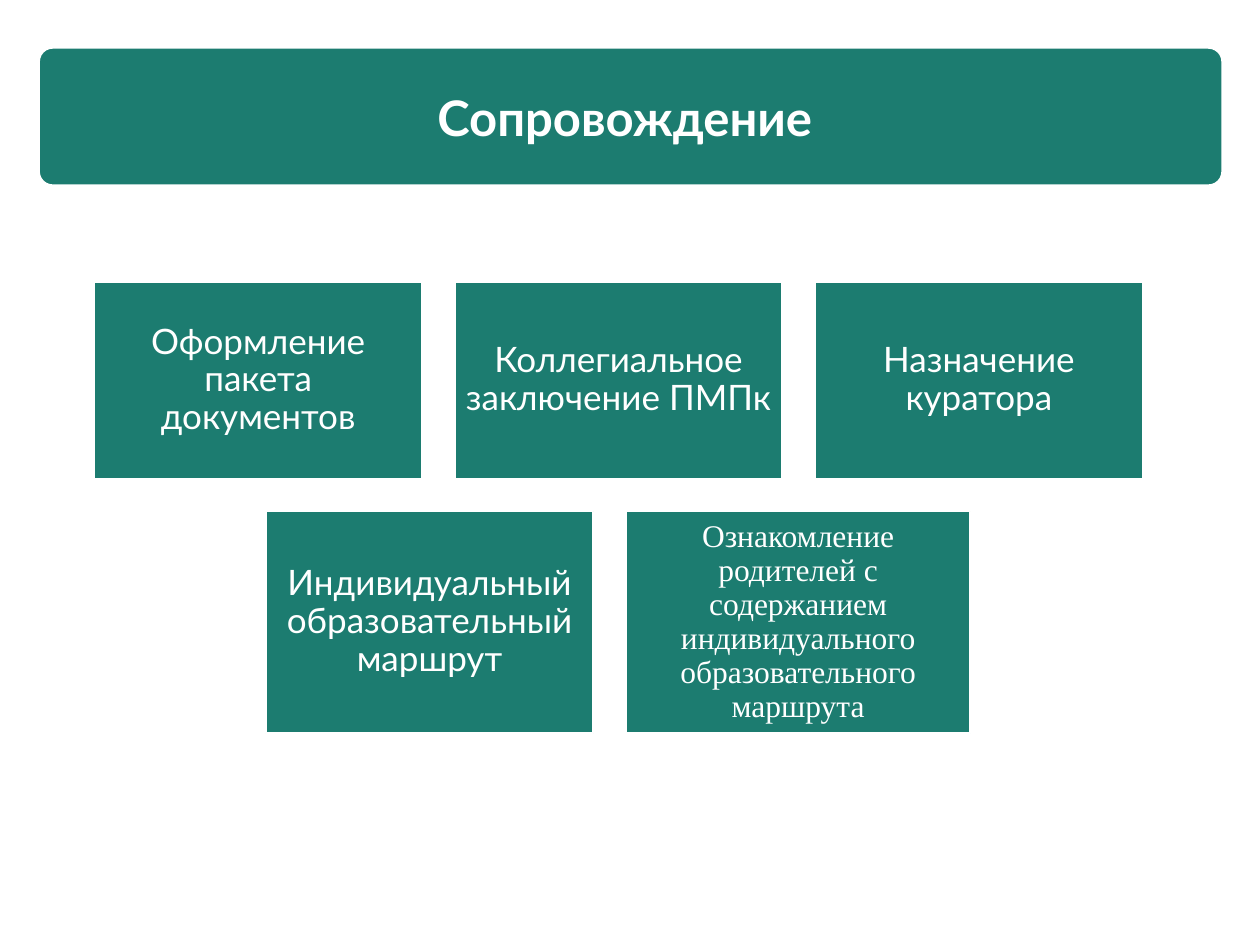
from dataclasses import dataclass

from pptx import Presentation
from pptx.dml.color import RGBColor
from pptx.enum.shapes import MSO_SHAPE
from pptx.enum.text import MSO_ANCHOR, MSO_AUTO_SIZE, PP_ALIGN
from pptx.shapes.autoshape import Shape
from pptx.slide import Slide
from pptx.util import Inches, Pt

TEAL = RGBColor(0x1C, 0x7C, 0x70)
WHITE = RGBColor(0xFF, 0xFF, 0xFF)

STEP_WIDTH = 2.6
STEP_PITCH = 2.86


@dataclass
class Step:
    text: str
    width: float = STEP_WIDTH
    font: str = "Lato"
    size: int = 20
    inset: float = 0.08


@dataclass
class StepRow:
    left: float
    top: float
    height: float
    steps: list[Step]


ROWS = [
    StepRow(0.75, 2.24, 1.56, [
        Step("Оформление пакета документов"),
        Step("Коллегиальное заключение ПМПк"),
        Step("Назначение куратора"),
    ]),
    StepRow(2.11, 4.06, 1.76, [
        Step("Индивидуальный образовательный маршрут"),
        Step(
            "Ознакомление родителей с содержанием индивидуального "
            "образовательного маршрута",
            width=2.73, font="Times New Roman", size=18, inset=0.07,
        ),
    ]),
]


def add_panel(slide: Slide, kind: MSO_SHAPE, left: float, top: float,
              width: float, height: float) -> Shape:
    panel = slide.shapes.add_shape(
        kind, Inches(left), Inches(top), Inches(width), Inches(height))
    panel.shadow.inherit = False
    panel.fill.solid()
    panel.fill.fore_color.rgb = TEAL
    panel.line.color.rgb = WHITE
    panel.line.width = Pt(1)
    return panel


def write_text(box: Shape, text: str, inset: float, line_spacing: float,
               font_format: dict) -> None:
    frame = box.text_frame
    frame_format = {
        "word_wrap": True,
        "auto_size": MSO_AUTO_SIZE.NONE,
        "vertical_anchor": MSO_ANCHOR.MIDDLE,
    }
    for side in ("left", "top", "right", "bottom"):
        frame_format[f"margin_{side}"] = Inches(inset)
    for name, value in frame_format.items():
        setattr(frame, name, value)
    para = frame.paragraphs[0]
    para.alignment = PP_ALIGN.CENTER
    para.line_spacing = line_spacing
    span = para.add_run()
    span.text = text
    for name, value in font_format.items():
        setattr(span.font, name, value)
    span.font.color.rgb = WHITE


def add_step_row(slide: Slide, row: StepRow) -> None:
    for index, step in enumerate(row.steps):
        box = add_panel(slide, MSO_SHAPE.RECTANGLE, row.left + index * STEP_PITCH,
                        row.top, step.width, row.height)
        write_text(box, step.text, step.inset, 0.9,
                   {"name": step.font, "size": Pt(step.size)})


def add_title(slide: Slide, text: str) -> None:
    banner = add_panel(slide, MSO_SHAPE.ROUNDED_RECTANGLE, 0.31, 0.38, 9.39, 1.09)
    banner.adjustments[0] = 0.1
    title = slide.shapes.title
    placement = {"left": 0.35, "top": 0.41, "width": 9.31, "height": 1.03}
    for name, value in placement.items():
        setattr(title, name, Inches(value))
    write_text(title, text, 0.12, 1.0,
               {"name": "Lato", "size": Pt(28), "bold": True})
    banner.element.addnext(title.element)


def main() -> None:
    deck = Presentation()
    deck.slide_width = Inches(10)
    deck.slide_height = Inches(7.5)
    slide = deck.slides.add_slide(deck.slide_layouts[5])
    for row in ROWS:
        add_step_row(slide, row)
    add_title(slide, "Сопровождение ")
    deck.save("out.pptx")


if __name__ == "__main__":
    main()
